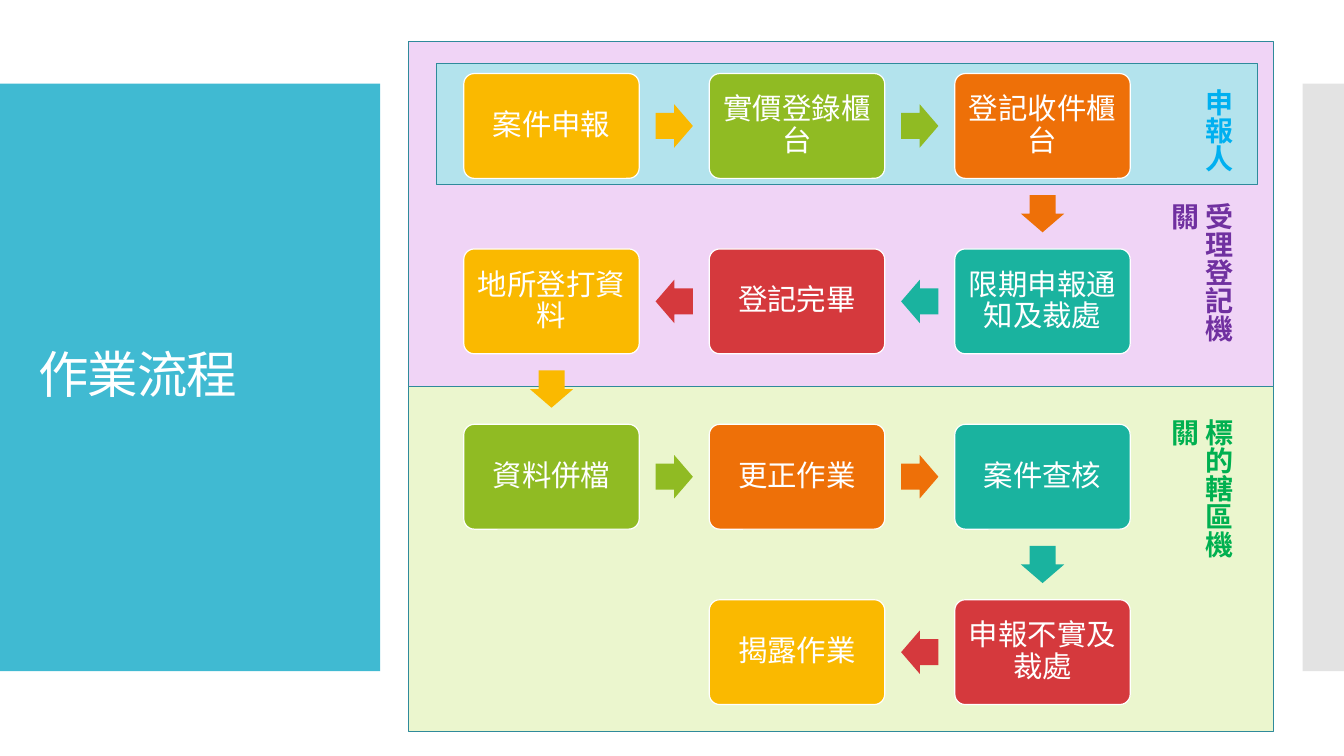
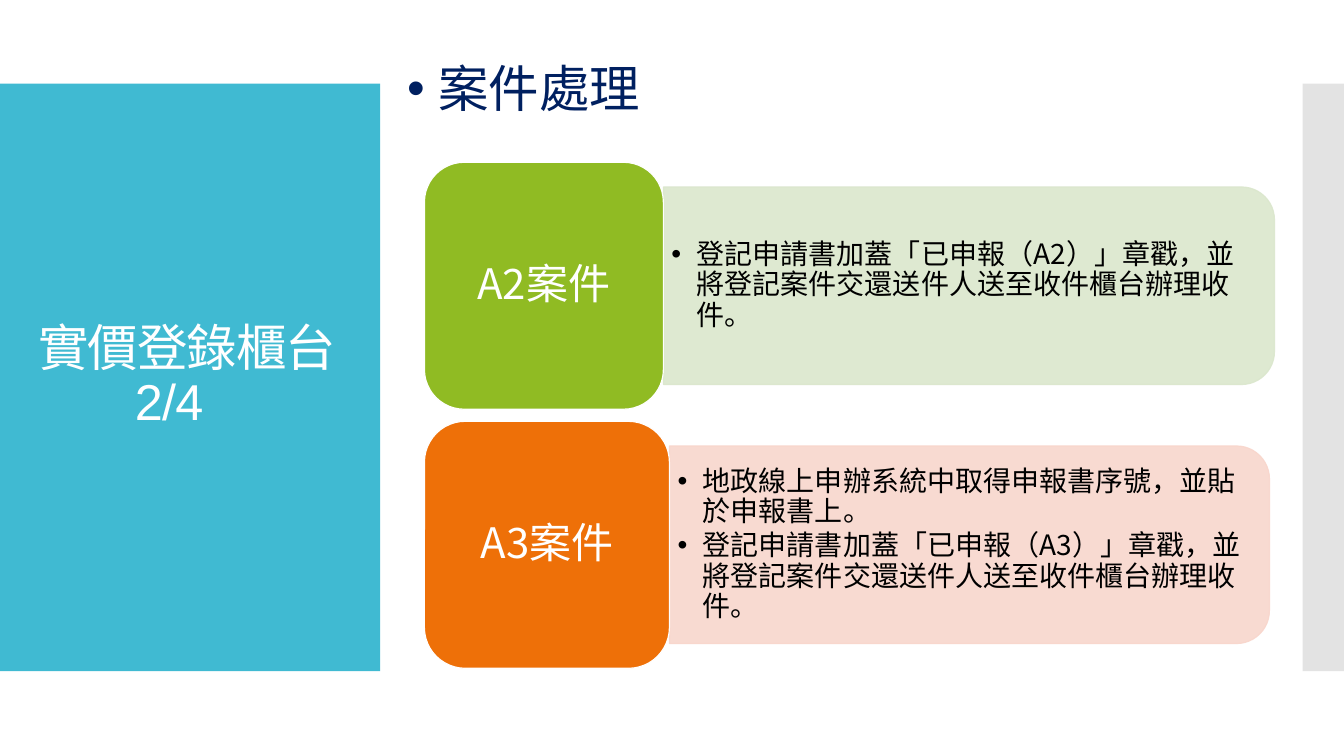
from math import atan2, degrees

from lxml.etree import SubElement
from pptx import Presentation
from pptx.dml.color import RGBColor
from pptx.enum.shapes import MSO_SHAPE
from pptx.enum.text import MSO_ANCHOR, MSO_AUTO_SIZE, PP_ALIGN
from pptx.oxml.ns import qn
from pptx.util import Inches, Pt

SANS = "Noto Sans CJK SC"
ARIAL = "Arial"
WHITE = RGBColor(0xFF, 0xFF, 0xFF)
BLACK = RGBColor(0x00, 0x00, 0x00)
NAVY = RGBColor(0x00, 0x20, 0x60)
SKY = RGBColor(0x40, 0xBA, 0xD2)
GRAY = RGBColor(0xC8, 0xC8, 0xC8)
OUTLINE = RGBColor(0x2F, 0x8A, 0x9B)
YELLOW = RGBColor(0xFA, 0xB9, 0x00)
GREEN = RGBColor(0x90, 0xBB, 0x23)
ORANGE = RGBColor(0xEE, 0x70, 0x08)
TEAL = RGBColor(0x1A, 0xB3, 0x9F)
RED = RGBColor(0xD5, 0x39, 0x3D)
PALE_BLUE = RGBColor(0xB3, 0xE3, 0xED)
PALE_PURPLE = RGBColor(0xF0, 0xD4, 0xF6)
PALE_LIME = RGBColor(0xEB, 0xF6, 0xCE)
PALE_GREEN = RGBColor(0xDB, 0xE7, 0xCD)
PALE_RED = RGBColor(0xF8, 0xD6, 0xCC)
LABEL_BLUE = RGBColor(0x00, 0xB0, 0xF0)
LABEL_PURPLE = RGBColor(0x70, 0x30, 0xA0)
LABEL_GREEN = RGBColor(0x00, 0xB0, 0x50)

STEP_COLORS = [YELLOW, GREEN, ORANGE, TEAL, RED]
STEPS = [
    "案件申報", "實價登錄櫃台", "登記收件櫃台",
    "限期申報通知及裁處", "登記完畢", "地所登打資料",
    "資料併檔", "更正作業", "案件查核",
    "申報不實及裁處", "揭露作業",
]
CASES = [
    ("A2案件", GREEN, PALE_GREEN, 2.37, 6.06, [
        "登記申請書加蓋「已申報（A2）」章戳，並將登記案件交還送件人送至收件櫃台辦理收件。",
    ]),
    ("A3案件", ORANGE, PALE_RED, 2.43, 5.95, [
        "地政線上申辦系統中取得申報書序號，並貼於申報書上。",
        "登記申請書加蓋「已申報（A3）」章戳，並將登記案件交還送件人送至收件櫃台辦理收件。",
    ]),
]


def inches(box):
    return [Inches(length) for length in box]


def set_opacity(color_format, percent):
    for color in color_format._xFill.iter(qn("a:srgbClr")):
        SubElement(color, qn("a:alpha")).set("val", str(percent * 1000))


def add_block(slide, kind, box, fill, line=None, opacity=100):
    shape = slide.shapes.add_shape(kind, *inches(box))
    shape.shadow.inherit = False
    shape.fill.solid()
    shape.fill.fore_color.rgb = fill
    if line is None:
        shape.line.fill.background()
    else:
        shape.line.color.rgb = line
        shape.line.width = Pt(0.85)
    if opacity < 100:
        for color in list(shape._element.spPr.iter(qn("a:srgbClr"))):
            SubElement(color, qn("a:alpha")).set("val", str(opacity * 1000))
    return shape


def add_text_box(slide, box, anchor=MSO_ANCHOR.TOP):
    shape = slide.shapes.add_textbox(*inches(box))
    shape.text_frame.word_wrap = True
    shape.text_frame.vertical_anchor = anchor
    return shape


def set_margins(frame, horizontal, vertical):
    frame.margin_left = frame.margin_right = Inches(horizontal)
    frame.margin_top = frame.margin_bottom = Inches(vertical)


def add_run(paragraph, text, size, color, font=SANS, bold=False):
    run = paragraph.add_run()
    run.text = text
    run.font.size = Pt(size)
    run.font.bold = bold
    run.font.color.rgb = color
    run.font.name = font
    SubElement(run.font._element, qn("a:ea")).set("typeface", SANS)
    return run


def set_indent(paragraph, left, first=0):
    properties = paragraph._p.get_or_add_pPr()
    properties.set("marL", str(Inches(left)))
    properties.set("indent", str(Inches(first)))
    return properties


def add_bullet(paragraph, indent):
    properties = set_indent(paragraph, indent, -indent)
    SubElement(properties, qn("a:buFont")).set("typeface", ARIAL)
    SubElement(properties, qn("a:buChar")).set("char", "•")


def add_tile(slide, box, fill, text, size, margins, corner=None):
    tile = add_block(slide, MSO_SHAPE.ROUNDED_RECTANGLE, box, fill, WHITE)
    if corner is not None:
        tile.adjustments[0] = corner
    frame = tile.text_frame
    frame.word_wrap = True
    frame.vertical_anchor = MSO_ANCHOR.MIDDLE
    set_margins(frame, *margins)
    paragraph = frame.paragraphs[0]
    paragraph.alignment = PP_ALIGN.CENTER
    paragraph.line_spacing = 0.9
    add_run(paragraph, text, size, WHITE)


def add_base_slide(presentation, title_lines):
    slide = presentation.slides.add_slide(presentation.slide_layouts[6])
    add_block(slide, MSO_SHAPE.RECTANGLE, (0, 0.83, 3.77, 5.83), SKY)
    add_block(slide, MSO_SHAPE.RECTANGLE, (12.92, 0.83, 0.41, 5.83), GRAY, opacity=50)
    frame = add_text_box(slide, (0.28, 1.23, 3.22, 5.03), MSO_ANCHOR.MIDDLE).text_frame
    for index, (text, indent) in enumerate(title_lines):
        paragraph = frame.add_paragraph() if index else frame.paragraphs[0]
        paragraph.line_spacing = 0.9
        set_indent(paragraph, indent)
        run = add_run(paragraph, text, 36, WHITE, ARIAL)
        run.font._element.set("spc", "-60")
    return slide


def add_lanes(slide, box):
    left, top, width, height = box
    half = height / 2
    lanes = [
        ((left, top + half, width, half), PALE_LIME),
        ((left, top, width, half), PALE_PURPLE),
        ((left + 0.28, top + 0.22, width - 0.44, 1.2), PALE_BLUE),
    ]
    for lane_box, fill in lanes:
        add_block(slide, MSO_SHAPE.RECTANGLE, lane_box, fill, OUTLINE)


def add_lane_labels(slide, box):
    left, top, width, height = box
    labels = [
        ("申報人", 0.37, 1.05, LABEL_BLUE),
        ("受理登記機關", 1.5, 1.76, LABEL_PURPLE),
        ("標的轄區機關", 3.65, 1.76, LABEL_GREEN),
    ]
    for text, offset, length, color in labels:
        label = add_text_box(slide, (left + width - 0.87, top + offset, 0.54, length))
        frame = label.text_frame
        frame.auto_size = MSO_AUTO_SIZE.SHAPE_TO_FIT_TEXT
        frame._txBody.bodyPr.set("vert", "eaVert")
        add_run(frame.paragraphs[0], text, 20, color, bold=True)


def add_step_flow(slide, box):
    left, top, width, height = box
    step_width, step_height = 1.74, 1.04
    column_pitch = (width - step_width) / 2
    row_pitch = (height - step_height) / 3
    arrow_width, arrow_height = 0.37, 0.43
    centers = []
    for index, text in enumerate(STEPS):
        row, column = divmod(index, 3)
        if row % 2:
            column = 2 - column
        x = left + column * column_pitch
        y = top + row * row_pitch
        centers.append((x + step_width / 2, y + step_height / 2))
        add_tile(slide, (x, y, step_width, step_height), STEP_COLORS[index % 5],
                 text, 21, (0.09, 0.09), 0.1)
    for index, (start, end) in enumerate(zip(centers, centers[1:])):
        x = (start[0] + end[0] - arrow_width) / 2
        y = (start[1] + end[1] - arrow_height) / 2
        arrow = add_block(slide, MSO_SHAPE.RIGHT_ARROW, (x, y, arrow_width, arrow_height),
                          STEP_COLORS[index % 5])
        arrow.adjustments[0] = 0.6
        arrow.adjustments[1] = 0.5
        arrow.rotation = degrees(atan2(end[1] - start[1], end[0] - start[0]))


def add_case(slide, left, top, case):
    name, fill, pale, tile_width, panel_width, notes = case
    tile_height, panel_height, text_height = 2.45, 1.96, 1.77
    panel_left = left + tile_width
    middle = top + tile_height / 2
    panel_box = (panel_left + (panel_width - panel_height) / 2, middle - panel_width / 2,
                 panel_height, panel_width)
    panel = add_block(slide, MSO_SHAPE.ROUND_2_SAME_RECTANGLE, panel_box, pale, pale, 90)
    panel.rotation = 90
    text_box = (panel_left, middle - text_height / 2, panel_width - 0.1, text_height)
    frame = add_text_box(slide, text_box, MSO_ANCHOR.MIDDLE).text_frame
    set_margins(frame, 0.08, 0.04)
    for index, note in enumerate(notes):
        paragraph = frame.add_paragraph() if index else frame.paragraphs[0]
        paragraph.line_spacing = 0.9
        paragraph.space_after = Pt(3)
        add_bullet(paragraph, 0.25)
        add_run(paragraph, note, 20, BLACK)
    add_tile(slide, (left, top, tile_width, tile_height), fill, name, 30, (0.12, 0.06))


def add_heading(slide, box, text):
    paragraph = add_text_box(slide, box).text_frame.paragraphs[0]
    add_bullet(paragraph, 0.31)
    add_run(paragraph, text, 36, NAVY)


def build_flow_slide(presentation):
    slide = add_base_slide(presentation, [("作業流程", 0)])
    lanes_box = (4.05, 0.41, 8.58, 6.85)
    add_lanes(slide, lanes_box)
    add_step_flow(slide, (4.6, 0.73, 6.61, 6.26))
    add_lane_labels(slide, lanes_box)


def build_cases_slide(presentation):
    slide = add_base_slide(presentation, [("實價登錄櫃台", 0), ("2/4", 0.96)])
    add_heading(slide, (3.94, 0.52, 8.45, 0.71), "案件處理")
    for index, case in enumerate(CASES):
        add_case(slide, 4.21, 1.61 + index * 2.57, case)


def main():
    presentation = Presentation()
    presentation.slide_width = Inches(13.33)
    presentation.slide_height = Inches(7.5)
    build_flow_slide(presentation)
    build_cases_slide(presentation)
    presentation.save("out.pptx")


if __name__ == "__main__":
    main()
